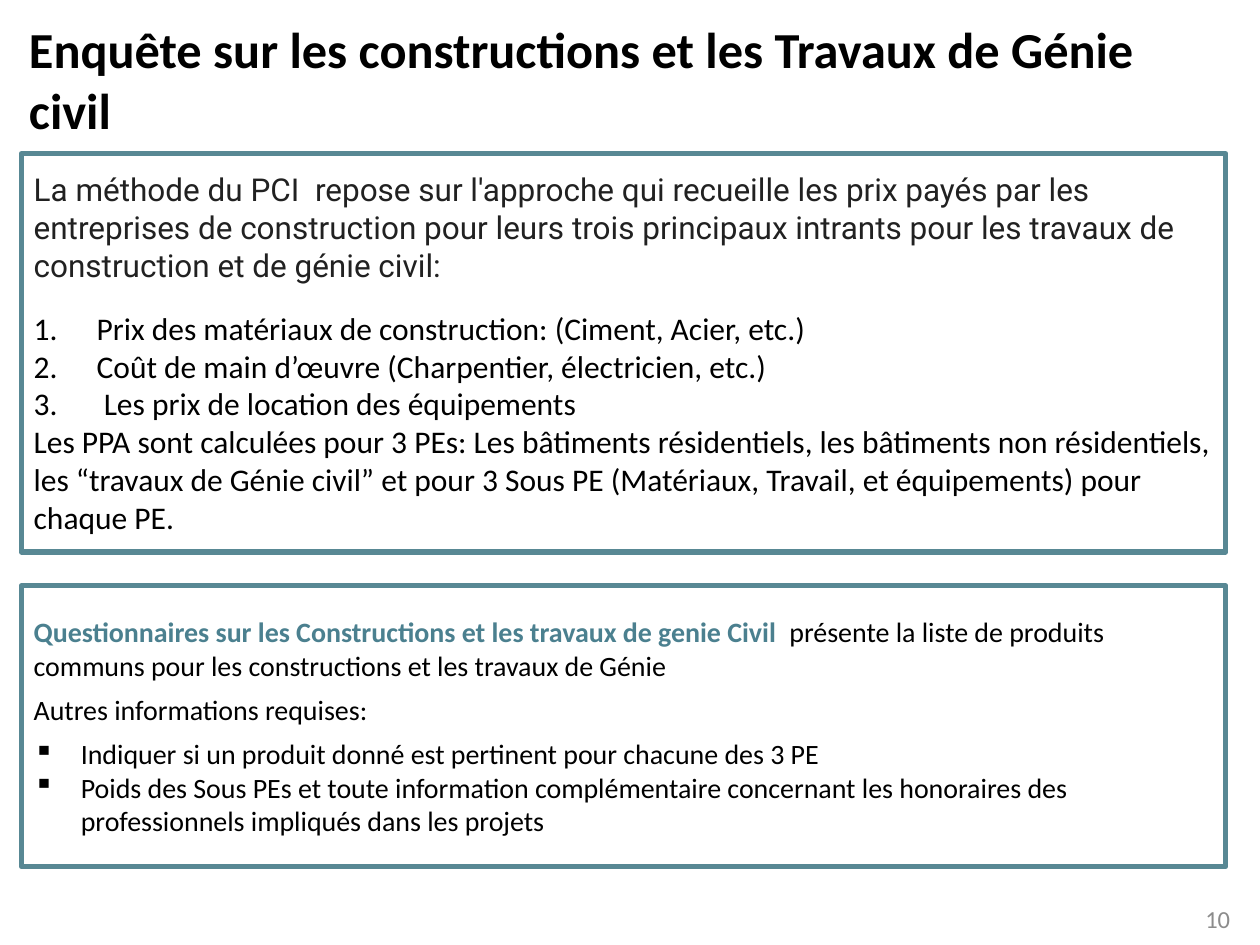
from dataclasses import dataclass

from lxml.etree import SubElement
from pptx import Presentation
from pptx.dml.color import RGBColor
from pptx.enum.shapes import MSO_SHAPE
from pptx.enum.text import MSO_ANCHOR, MSO_AUTO_SIZE, PP_ALIGN
from pptx.oxml.ns import qn
from pptx.util import Cm, Pt

BLACK, DARK, GREY = "000000", "212121", "8C8C8C"
BORDER, ACCENT, WHITE = "588894", "4B808F", "FFFFFF"
BOX_LEFT, BOX_WIDTH = 0.43, 24.28


@dataclass
class Run:
    text: str
    color: str = BLACK
    bold: bool = False
    font: str = "Calibri"


@dataclass
class Para:
    runs: list[Run]
    after: float = 0
    indent: float = 0
    bullet: str = ""  # "1." numbers the paragraph, any other text is the bullet itself


@dataclass
class Box:
    top: float
    height: float
    size: float
    paras: list[Para]


def numbered(text: str) -> Para:
    return Para([Run(text)], indent=1.27, bullet="1.")


def bulleted(text: str) -> Para:
    return Para([Run(text)], indent=0.95, bullet="▪")


BOXES = [
    Box(3.1, 8.03, 18, [
        Para([Run("La méthode du PCI  repose sur l'approche qui recueille les prix payés par les "
                  "entreprises de construction pour leurs trois principaux intrants pour les "
                  "travaux de construction et de génie civil:", DARK, font="Roboto")], after=14.5),
        numbered("Prix des matériaux de construction: (Ciment, Acier, etc.)"),
        numbered("Coût de main d’œuvre (Charpentier, électricien, etc.)"),
        numbered(" Les prix de location des équipements"),
        Para([Run("Les PPA sont calculées pour 3 PEs: Les bâtiments résidentiels, les bâtiments "
                  "non résidentiels, les “travaux de Génie civil” et pour 3 Sous PE (Matériaux, "
                  "Travail, et équipements) pour chaque PE.")], after=6),
    ]),
    Box(11.81, 5.66, 16, [
        Para([Run("Questionnaires sur les Constructions et les travaux de genie Civil",
                  ACCENT, bold=True),
              Run("  présente la liste de produits communs pour les constructions et les "
                  "travaux de Génie")], after=6),
        Para([Run("Autres informations requises:")], after=6),
        bulleted("Indiquer si un produit donné est pertinent pour chacune des 3 PE"),
        bulleted("Poids des Sous PEs et toute information complémentaire concernant les "
                 "honoraires des professionnels impliqués dans les projets"),
    ]),
]


def rgb(color: str) -> RGBColor:
    return RGBColor.from_string(color)


def set_bullet(p, para: Para) -> None:
    pPr = p._p.get_or_add_pPr()
    pPr.set("marL", str(Cm(para.indent)))
    pPr.set("indent", str(-Cm(para.indent)))
    if para.bullet == "1.":
        SubElement(pPr, qn("a:buAutoNum"), type="arabicPeriod")
    else:
        SubElement(pPr, qn("a:buChar"), char=para.bullet)


def write(tf, paras: list[Para], size: float, align=PP_ALIGN.LEFT) -> None:
    tf.word_wrap = True
    tf.auto_size = MSO_AUTO_SIZE.NONE
    tf.vertical_anchor = MSO_ANCHOR.MIDDLE
    for i, para in enumerate(paras):
        p = tf.add_paragraph() if i else tf.paragraphs[0]
        p.alignment = align
        p.space_before, p.space_after = Pt(0), Pt(para.after)
        if para.bullet:
            set_bullet(p, para)
        for run in para.runs:
            r = p.add_run()
            r.text = run.text
            r.font.name, r.font.size, r.font.bold = run.font, Pt(size), run.bold
            r.font.color.rgb = rgb(run.color)


def draw_box(s, box: Box) -> None:
    sp = s.shapes.add_shape(MSO_SHAPE.RECTANGLE, Cm(BOX_LEFT), Cm(box.top),
                            Cm(BOX_WIDTH), Cm(box.height))
    sp.shadow.inherit = False
    sp.fill.solid()
    sp.fill.fore_color.rgb = rgb(WHITE)
    sp.line.color.rgb = rgb(BORDER)
    sp.line.width = Pt(3)
    write(sp.text_frame, box.paras, box.size)


def main() -> None:
    prs = Presentation()
    prs.slide_width, prs.slide_height = Cm(25.4), Cm(19.05)
    s = prs.slides.add_slide(prs.slide_layouts[5])

    title = s.shapes.title
    title.left, title.top, title.width, title.height = Cm(0.33), Cm(0.61), Cm(24.38), Cm(1.96)
    heading = Run("Enquête sur les constructions et les Travaux de Génie civil", bold=True)
    write(title.text_frame, [Para([heading])], 28.8)

    for box in BOXES:
        draw_box(s, box)

    number = s.shapes.add_textbox(Cm(19.13), Cm(18.21), Cm(5.92), Cm(0.64))
    write(number.text_frame, [Para([Run("10", GREY)])], 14, PP_ALIGN.RIGHT)

    prs.save("out.pptx")


if __name__ == "__main__":
    main()
